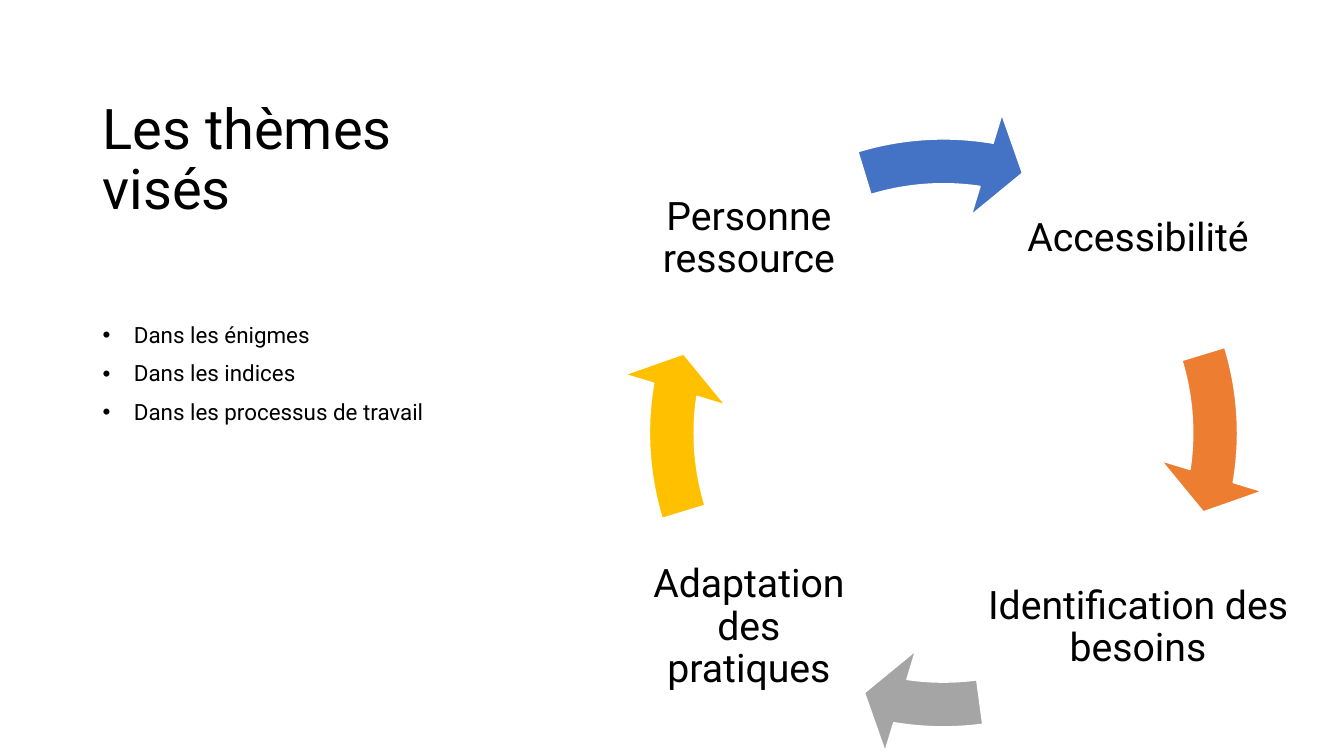
"""Build a slide with a list of places and a four-step cycle of themes."""
from dataclasses import dataclass

from lxml import etree
from pptx import Presentation
from pptx.dml.color import RGBColor
from pptx.enum.shapes import MSO_SHAPE
from pptx.enum.text import MSO_ANCHOR, PP_ALIGN
from pptx.oxml.ns import qn
from pptx.util import Inches, Pt

CIRCULAR_ARROW = MSO_SHAPE.CIRCULAR_ARROW
TOP, MIDDLE, BOTTOM = MSO_ANCHOR.TOP, MSO_ANCHOR.MIDDLE, MSO_ANCHOR.BOTTOM
LEFT, CENTER = PP_ALIGN.LEFT, PP_ALIGN.CENTER

WIDTH, HEIGHT = Inches(13.33), Inches(7.5)
MARGIN, COLUMN = 0.069 * WIDTH, 0.3226 * WIDTH

CYCLE_X, CYCLE_Y = 0.702 * WIDTH, 0.5727 * HEIGHT
CYCLE_SIZE = 0.8573 * HEIGHT
THEME_OFFSET = 0.2573 * HEIGHT
THEME_SIZE, WIDE_THEME = 0.304 * HEIGHT, 0.4173 * HEIGHT

DEGREE = 0.6
QUARTER = 90 * DEGREE
ARROW_THICKNESS, ARROW_TIP = 0.069, 0.081
HEAD_ANGLE = 7.76 * DEGREE
ARROW_START, ARROW_END = 343.1 * DEGREE, 9.14 * DEGREE
BULLET_INDENT = Inches(0.31)


@dataclass(frozen=True)
class Theme:
    """Fonts, sizes and colours of the slide."""

    font: str = "Roboto"
    title: int = 40
    label: int = 28
    body: int = 16
    text: str = "000000"
    outline: str = "FFFFFF"
    blue: str = "4472C4"
    orange: str = "ED7D31"
    grey: str = "A5A5A5"
    yellow: str = "FFC000"


THEME = Theme()
PLACES = ["Dans les énigmes", "Dans les indices", "Dans les processus de travail"]
# Label, column side, row side, box width, arrow colour, shift of the arrow's start
CYCLE = [
    ("Accessibilité", 1, -1, THEME_SIZE, THEME.orange, 0),
    ("Identification des besoins", 1, 1, WIDE_THEME, THEME.grey, 9.23),
    ("Adaptation des pratiques", -1, 1, THEME_SIZE, THEME.yellow, 0),
    ("Personne ressource", -1, -1, THEME_SIZE, THEME.blue, 0),
]


def centred_box(x, y, width, height):
    """Return the left, top, width and height of a box around a point."""
    return x - width / 2, y - height / 2, width, height


def add_bullet(paragraph):
    """Give a paragraph a round bullet with a hanging indent."""
    properties = paragraph._p.get_or_add_pPr()
    properties.set("marL", str(BULLET_INDENT))
    properties.set("indent", str(-BULLET_INDENT))
    etree.SubElement(properties, qn("a:buFont")).set("typeface", "Arial")
    etree.SubElement(properties, qn("a:buChar")).set("char", "•")


def add_text(slide, box, lines, size, anchor=TOP, align=LEFT, inset=None, bullets=False):
    """Add a wrapped text box with one paragraph per line."""
    frame = slide.shapes.add_textbox(*map(int, box)).text_frame
    frame.word_wrap = True
    frame.vertical_anchor = anchor
    if inset is not None:
        frame.margin_left = frame.margin_right = inset
        frame.margin_top = frame.margin_bottom = inset
    for index, line in enumerate(lines):
        paragraph = frame.add_paragraph() if index else frame.paragraphs[0]
        paragraph.text = line
        paragraph.alignment = align
        paragraph.line_spacing = 0.9
        if index:
            paragraph.space_before = Pt(10)
        if bullets:
            add_bullet(paragraph)
        paragraph.font.name = THEME.font
        paragraph.font.size = Pt(size)
        paragraph.font.color.rgb = RGBColor.from_string(THEME.text)


def add_cycle_arrow(slide, quarter, color, start_shift):
    """Add the curved arrow of one quarter of the cycle."""
    box = centred_box(CYCLE_X, CYCLE_Y, CYCLE_SIZE, CYCLE_SIZE)
    arrow = slide.shapes.add_shape(CIRCULAR_ARROW, *map(int, box))
    start = (ARROW_START + quarter * QUARTER + start_shift * DEGREE) % (4 * QUARTER)
    end = ARROW_END + quarter * QUARTER
    values = ARROW_THICKNESS, HEAD_ANGLE, end, start, ARROW_TIP
    for index, value in enumerate(values):
        arrow.adjustments[index] = value
    arrow.shadow.inherit = False
    arrow.fill.solid()
    arrow.fill.fore_color.rgb = RGBColor.from_string(color)
    arrow.line.color.rgb = RGBColor.from_string(THEME.outline)
    arrow.line.width = Pt(1)


def add_cycle(slide):
    """Add the themes and the arrows that lead from one to the next."""
    for quarter, (label, side, row, width, color, start_shift) in enumerate(CYCLE):
        x, y = CYCLE_X + side * THEME_OFFSET, CYCLE_Y + row * THEME_OFFSET
        box = centred_box(x, y, width, THEME_SIZE)
        add_text(slide, box, [label], THEME.label, MIDDLE, CENTER, Inches(0.04))
        add_cycle_arrow(slide, quarter, color, start_shift)


def main():
    """Build and save the presentation."""
    presentation = Presentation()
    presentation.slide_width, presentation.slide_height = WIDTH, HEIGHT
    slide = presentation.slides.add_slide(presentation.slide_layouts[6])
    title_box = MARGIN, HEIGHT / 15, COLUMN, 0.2333 * HEIGHT
    add_text(slide, title_box, ["Les thèmes visés"], THEME.title, BOTTOM)
    add_cycle(slide)
    places_box = MARGIN, 0.4227 * HEIGHT, COLUMN, 0.4333 * HEIGHT
    add_text(slide, places_box, PLACES, THEME.body, bullets=True)
    presentation.save("out.pptx")


if __name__ == "__main__":
    main()
